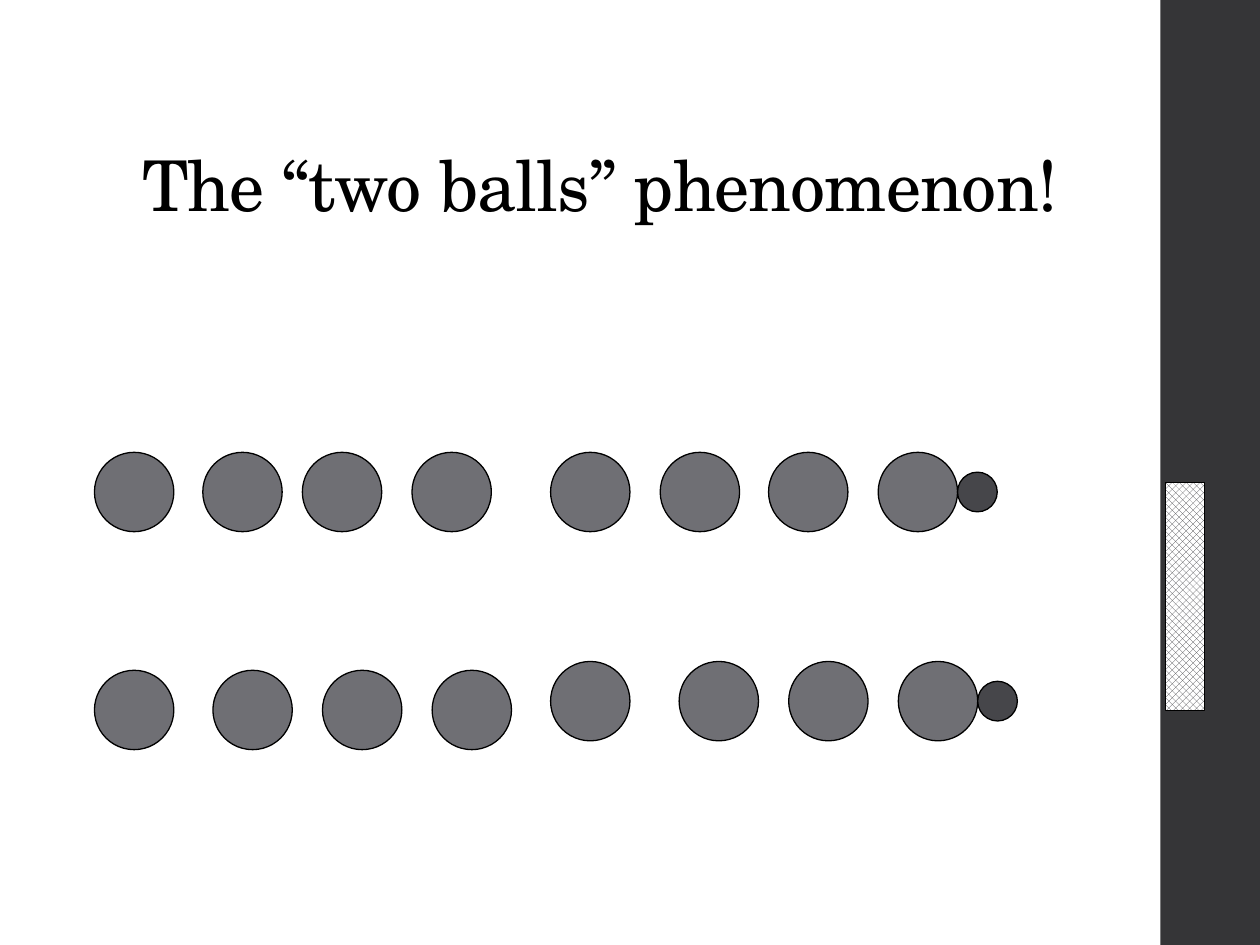
from dataclasses import dataclass

from pptx import Presentation
from pptx.dml.color import RGBColor
from pptx.enum import dml, shapes, text
from pptx.shapes.autoshape import Shape
from pptx.slide import Slide
from pptx.util import Inches, Pt

BLACK = RGBColor(0x00, 0x00, 0x00)
WHITE = RGBColor(0xFF, 0xFF, 0xFF)
BALL_GREY = RGBColor(0x6F, 0x6F, 0x74)
DARK_GREY = RGBColor(0x46, 0x46, 0x4A)
SIDEBAR_GREY = RGBColor(0x35, 0x35, 0x37)

BALL = 0.63
SMALL_BALL = BALL / 2
UPPER, LOWER, LOWER_LEFT = 3.59, 5.25, 5.32


@dataclass(frozen=True)
class BallGroup:
    """Balls in a line: the top they share and each left edge."""
    top: float
    lefts: tuple[float, ...]
    has_small_ball: bool = False


GROUPS = (
    BallGroup(UPPER, (0.75, 1.61, 2.4, 3.27)),
    BallGroup(UPPER, (4.37, 5.24, 6.1, 6.97), has_small_ball=True),
    BallGroup(LOWER_LEFT, (0.75, 1.69, 2.56, 3.43)),
    BallGroup(LOWER, (4.37, 5.39, 6.26, 7.13), has_small_ball=True),
)


def add_outlined(slide: Slide, kind: shapes.MSO_SHAPE, left: float, top: float,
                 width: float, height: float) -> Shape:
    """Add a shape with a thin black outline and no shadow."""
    shape = slide.shapes.add_shape(kind, Inches(left), Inches(top),
                                   Inches(width), Inches(height))
    shape.shadow.inherit = False
    shape.line.color.rgb = BLACK
    shape.line.width = Pt(0.75)
    return shape


def add_ball(slide: Slide, left: float, top: float, size: float, color: RGBColor) -> None:
    ball = add_outlined(slide, shapes.MSO_SHAPE.OVAL, left, top, size, size)
    ball.fill.solid()
    ball.fill.fore_color.rgb = color


def add_group(slide: Slide, group: BallGroup) -> None:
    """Draw the balls, and a small one touching the last if the group has it."""
    for left in group.lefts:
        add_ball(slide, left, group.top, BALL, BALL_GREY)
    if group.has_small_ball:
        add_ball(slide, group.lefts[-1] + BALL, group.top + (BALL - SMALL_BALL) / 2,
                 SMALL_BALL, DARK_GREY)


def add_sidebar(slide: Slide) -> None:
    sidebar = slide.shapes.add_shape(shapes.MSO_SHAPE.RECTANGLE, Inches(9.21), Inches(0),
                                     Inches(0.8), Inches(7.5))
    sidebar.shadow.inherit = False
    sidebar.fill.solid()
    sidebar.fill.fore_color.rgb = SIDEBAR_GREY
    sidebar.line.fill.background()


def add_title(slide: Slide, wording: str) -> None:
    title = slide.shapes.add_textbox(Inches(1.03), Inches(0.4), Inches(7.95), Inches(1.45))
    frame = title.text_frame
    frame.word_wrap = True
    frame.vertical_anchor = text.MSO_ANCHOR.BOTTOM
    paragraph = frame.paragraphs[0]
    paragraph.line_spacing = 0.9
    run = paragraph.add_run()
    run.text = wording
    for name, value in {"name": "TeX Gyre Schola", "size": Pt(40)}.items():
        setattr(run.font, name, value)
    run.font.color.rgb = BLACK
    run._r.get_or_add_rPr().set("spc", "-50")


def add_patterned_bar(slide: Slide) -> None:
    bar = add_outlined(slide, shapes.MSO_SHAPE.RECTANGLE, 9.25, 3.83, 0.31, 1.81)
    bar.fill.patterned()
    bar.fill.pattern = dml.MSO_PATTERN.OUTLINED_DIAMOND
    bar.fill.fore_color.rgb = DARK_GREY
    bar.fill.back_color.rgb = WHITE


def main() -> None:
    deck = Presentation()
    deck.slide_width, deck.slide_height = Inches(10), Inches(7.5)
    slide = deck.slides.add_slide(deck.slide_layouts[6])
    add_sidebar(slide)
    add_title(slide, "The “two balls” phenomenon!")
    for group in GROUPS:
        add_group(slide, group)
    add_patterned_bar(slide)
    deck.save("out.pptx")


if __name__ == "__main__":
    main()
